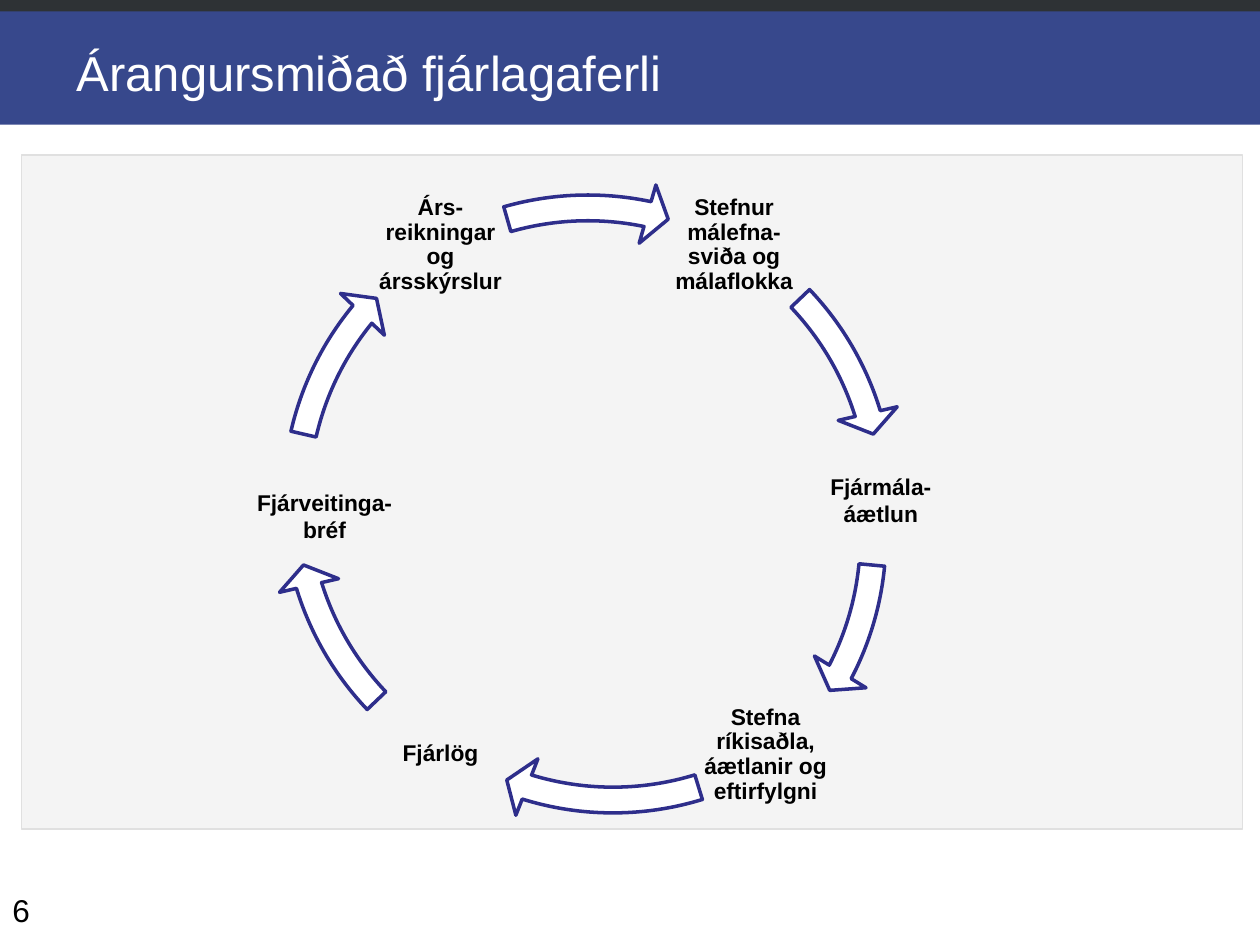
from dataclasses import dataclass

import pptx
import pptx.dml.color
import pptx.enum.shapes
import pptx.enum.text
import pptx.util
from lxml import etree
from pptx.oxml.ns import qn
from pptx.util import Inches

ALIGN = pptx.enum.text.PP_ALIGN
ANCHOR = pptx.enum.text.MSO_ANCHOR
SHAPE = pptx.enum.shapes.MSO_SHAPE


@dataclass(frozen=True)
class Theme:
    font: str = "Arial"
    title_size: float = 28
    number_size: float = 18
    step_size: float = 13
    text: str = "000000"
    white: str = "FFFFFF"
    band: str = "02176E"
    band_opacity: int = 79
    top_bar: str = "2E3235"
    panel: str = "F4F4F4"
    panel_edge: str = "E0E0E0"
    arrow_edge: str = "2E2E8B"


@dataclass(frozen=True)
class Box:
    left: float
    top: float
    width: float
    height: float

    def emu(self) -> list:
        return [Inches(v) for v in (self.left, self.top, self.width, self.height)]


@dataclass(frozen=True)
class Step:
    label: str
    box: Box
    spacing: float = 0.9
    inset: float = 0.02
    anchor: ANCHOR = ANCHOR.MIDDLE


@dataclass(frozen=True)
class CycleArrow:
    left: float
    top: float
    start: float  # degrees, clockwise from the right
    end: float


THEME = Theme()
RING_SIZE = 5.11
RING_WIDTH = 0.04
HEAD_WIDTH = 0.047
HEAD_ANGLE = 4.18
DEGREE = 0.6  # one degree in normalised adjustment units

STEPS = [
    Step("Stefnur málefna-sviða og málaflokka", Box(5.3, 1.42, 1.05, 1.05)),
    Step("Fjármála-áætlun", Box(6.34, 3.44, 1.3, 1.05), spacing=1.0),
    Step("Stefna ríkisaðla, áætlanir og eftirfylgni", Box(5.55, 5.33, 1.05, 1.32)),
    Step("Fjárlög", Box(2.97, 5.46, 1.05, 1.05)),
    Step("Fjárveitinga-bréf", Box(1.93, 3.83, 1.29, 0.54), spacing=1.0,
         inset=0.1, anchor=ANCHOR.TOP),
    Step("Árs-reikningar og ársskýrslur", Box(2.97, 1.42, 1.05, 1.05)),
]

ARROWS = [
    CycleArrow(2.12, 1.41, 316.41, 342.86),
    CycleArrow(2.06, 1.71, 5.44, 27.47),
    CycleArrow(2.31, 1.48, 72.92, 107.16),
    CycleArrow(2.11, 1.41, 136.41, 162.86),
    CycleArrow(2.11, 1.41, 192.96, 219.42),
    CycleArrow(2.11, 1.41, 253.99, 281.83),
]


def rgb(value: str) -> pptx.dml.color.RGBColor:
    return pptx.dml.color.RGBColor.from_string(value)


def add_shape(slide, kind, box: Box, fill: str, edge: str = "",
              edge_width: float = 0.75, opacity: int = 100):
    shape = slide.shapes.add_shape(kind, *box.emu())
    shape.shadow.inherit = False
    shape.fill.solid()
    shape.fill.fore_color.rgb = rgb(fill)
    if opacity < 100:
        color = shape.fill._xPr.find(qn("a:solidFill"))[0]
        etree.SubElement(color, qn("a:alpha"), val=str(opacity * 1000))
    if edge:
        shape.line.color.rgb = rgb(edge)
        shape.line.width = pptx.util.Pt(edge_width)
    else:
        shape.line.fill.background()
    return shape


def add_text(slide, text: str, box: Box, *, size: float, color: str = THEME.text,
             bold: bool = False, align=ALIGN.LEFT, anchor=ANCHOR.TOP,
             spacing: float = 1.0, inset: float = 0.1) -> None:
    frame = slide.shapes.add_textbox(*box.emu()).text_frame
    frame.word_wrap = True
    frame.vertical_anchor = anchor
    frame.margin_left = frame.margin_right = Inches(inset)
    frame.margin_top = frame.margin_bottom = Inches(min(inset, 0.05))
    paragraph = frame.paragraphs[0]
    paragraph.alignment = align
    paragraph.line_spacing = spacing
    run = paragraph.add_run()
    run.text = text
    run.font.name = THEME.font
    run.font.size = pptx.util.Pt(size)
    run.font.bold = bold
    run.font.color.rgb = rgb(color)


def add_step(slide, step: Step) -> None:
    add_text(slide, step.label, step.box, size=THEME.step_size, bold=True,
             align=ALIGN.CENTER, anchor=step.anchor, spacing=step.spacing,
             inset=step.inset)


def add_cycle_arrow(slide, arrow: CycleArrow) -> None:
    box = Box(arrow.left, arrow.top, RING_SIZE, RING_SIZE)
    shape = add_shape(slide, SHAPE.CIRCULAR_ARROW, box, THEME.white,
                      THEME.arrow_edge, edge_width=2)
    values = (RING_WIDTH, HEAD_ANGLE * DEGREE, arrow.end * DEGREE,
              arrow.start * DEGREE, HEAD_WIDTH)
    for index, value in enumerate(values):
        shape.adjustments[index] = value


def main() -> None:
    deck = pptx.Presentation()
    deck.slide_width, deck.slide_height = Inches(10), Inches(7.5)
    slide = deck.slides.add_slide(deck.slide_layouts[6])

    # Panel and header
    add_shape(slide, SHAPE.RECTANGLE, Box(0.17, 1.23, 9.69, 5.35),
              THEME.panel, THEME.panel_edge)
    add_shape(slide, SHAPE.RECTANGLE, Box(0, 0, 10.01, 0.99), THEME.band,
              opacity=THEME.band_opacity)
    add_shape(slide, SHAPE.RECTANGLE, Box(0, 0, 10, 0.09), THEME.top_bar)
    add_text(slide, "Árangursmiðað fjárlagaferli", Box(0.51, 0.29, 7.48, 0.57),
             size=THEME.title_size, color=THEME.white)

    # Budget cycle
    for arrow in ARROWS:
        add_cycle_arrow(slide, arrow)
    for step in STEPS:
        add_step(slide, step)

    # Page number
    add_text(slide, "6", Box(0, 7.02, 0.7, 0.47), size=THEME.number_size)

    deck.save("out.pptx")


if __name__ == "__main__":
    main()
